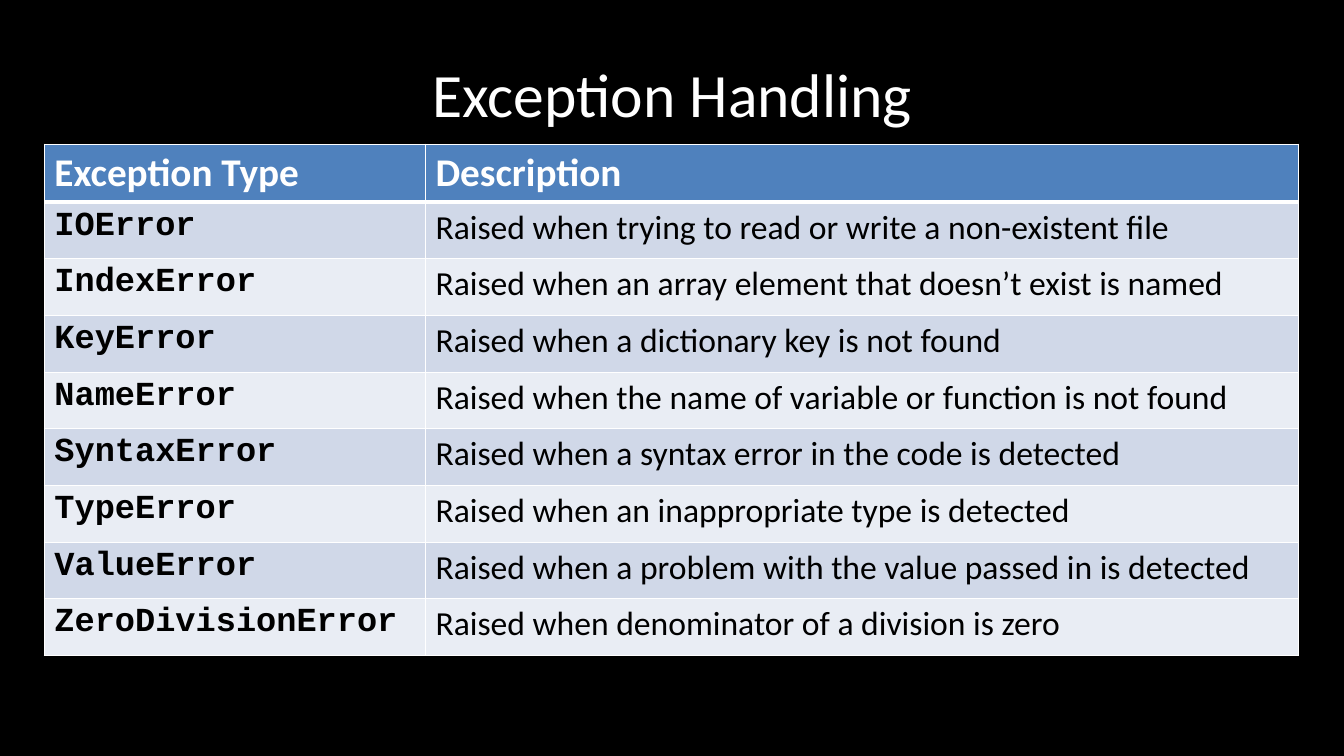
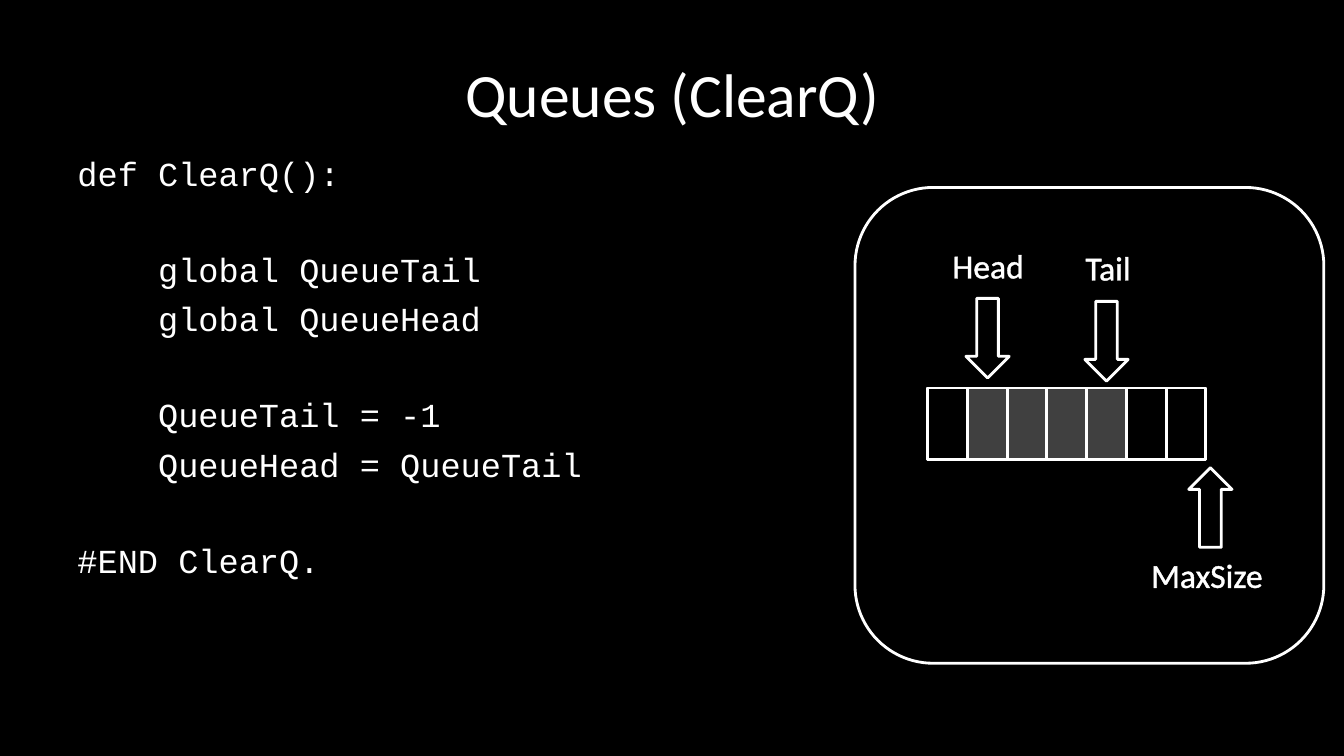
from lxml.etree import SubElement
from pptx import Presentation
from pptx.dml.color import RGBColor
from pptx.enum.shapes import MSO_SHAPE
from pptx.enum.text import MSO_ANCHOR, MSO_AUTO_SIZE, PP_ALIGN
from pptx.oxml import parse_xml
from pptx.oxml.ns import nsdecls, qn
from pptx.util import Inches, Pt

COLOURS = {
    "background": "000000",
    "white": "FFFFFF",
    "header": "4F81BD",
    "odd row": "D0D8E8",
    "even row": "E9EDF4",
    "filled cell": "404040",
}
TEXT_FONT, CODE_FONT = "Calibri", "Courier New"


def add_span(para, text, size, colour="white", font=TEXT_FONT, bold=False):
    span = para.add_run()
    span.text = text
    span.font.name = font
    span.font.size = Pt(size)
    span.font.bold = bold
    span.font.color.rgb = RGBColor.from_string(COLOURS[colour])
    return span


def add_outlined(page, kind, left, top, width, height, fill=None):
    """Add a white-outlined shape, see-through unless a fill is named."""
    shape = page.shapes.add_shape(
        kind, Inches(left), Inches(top), Inches(width), Inches(height))
    shape.shadow.inherit = False
    if fill:
        shape.fill.solid()
        shape.fill.fore_color.rgb = RGBColor.from_string(COLOURS[fill])
    else:
        shape.fill.background()
    shape.line.color.rgb = RGBColor.from_string(COLOURS["white"])
    shape.line.width = Pt(2)
    return shape


deck = Presentation()
deck.slide_width, deck.slide_height = Inches(13.33), Inches(7.5)
backdrop = deck.slide_master.background.fill
backdrop.solid()
backdrop.fore_color.rgb = RGBColor.from_string(COLOURS["background"])

pages = []
for heading in ("Exception Handling", "Queues (ClearQ)"):
    page = deck.slides.add_slide(deck.slide_layouts[5])
    title = page.shapes.title
    title.left, title.top = Inches(0.67), Inches(0.3)
    title.width, title.height = Inches(12), Inches(1.25)
    title.text_frame.vertical_anchor = MSO_ANCHOR.MIDDLE
    para = title.text_frame.paragraphs[0]
    para.alignment = PP_ALIGN.CENTER
    add_span(para, heading, 44)
    pages.append(page)
exceptions_page, queue_page = pages

# Exception table
rows = [
    ("Exception Type", "Description"),
    ("IOError", "Raised when trying to read or write a non-existent file"),
    ("IndexError", "Raised when an array element that doesn’t exist is named"),
    ("KeyError", "Raised when a dictionary key is not found"),
    ("NameError", "Raised when the name of variable or function is not found"),
    ("SyntaxError", "Raised when a syntax error in the code is detected"),
    ("TypeError", "Raised when an inappropriate type is detected"),
    ("ValueError", "Raised when a problem with the value passed in is detected"),
    ("ZeroDivisionError", "Raised when denominator of a division is zero"),
]
row_height = 5.06 / len(rows)
table = exceptions_page.shapes.add_table(
    len(rows), 2, Inches(0.44), Inches(1.43), Inches(12.44), Inches(5.06)).table
for column, width in zip(table.columns, (3.78, 8.66)):
    column.width = Inches(width)
for row_number, texts in enumerate(rows):
    table.rows[row_number].height = Inches(row_height)
    is_header = row_number == 0
    row_fill = "header" if is_header else ("even row", "odd row")[row_number % 2]
    for column_number, text in enumerate(texts):
        cell = table.cell(row_number, column_number)
        borders = cell._tc.get_or_add_tcPr()
        for side in "LRTB":
            under_header = (row_number, side) in ((0, "B"), (1, "T"))
            line = SubElement(borders, qn(f"a:ln{side}"),
                              w=str(Pt(3 if under_header else 1)))
            colour = SubElement(line, qn("a:solidFill"))
            SubElement(colour, qn("a:srgbClr"), val=COLOURS["white"])
        cell.fill.solid()
        cell.fill.fore_color.rgb = RGBColor.from_string(COLOURS[row_fill])
        para = cell.text_frame.paragraphs[0]
        if is_header:
            add_span(para, text, 28, bold=True)
        elif column_number == 0:
            add_span(para, text, 24, "background", CODE_FONT, bold=True)
        else:
            add_span(para, text, 24, "background")

# Code listing: text, indent level, gap of one line before it
code = [
    ("def ClearQ():", 0, False),
    ("global QueueTail", 1, True),
    ("global QueueHead", 1, False),
    ("QueueTail = -1", 1, True),
    ("QueueHead = QueueTail", 1, False),
    ("#END ClearQ.", 0, True),
]
line_gap, line_pitch = 6.3, 33.5
box = queue_page.shapes.add_textbox(
    Inches(0.67), Inches(1.47), Inches(12), Inches(4.95))
box.text_frame.word_wrap = True
for number, (text, level, has_gap) in enumerate(code):
    frame = box.text_frame
    para = frame.add_paragraph() if number else frame.paragraphs[0]
    para.space_before = Pt(line_gap + line_pitch * has_gap)
    para._p.get_or_add_pPr().set("marL", str(Inches(0.8 * level)))
    add_span(para, text, 24, font=CODE_FONT)

# Queue diagram
queue_left, queue_top, queue_width, queue_height = 9.2, 3.85, 2.76, 0.71
cell_count, filled_cells = 7, range(1, 5)
cell_width = queue_width / cell_count
add_outlined(queue_page, MSO_SHAPE.ROUNDED_RECTANGLE, 8.48, 1.86, 4.65, 4.72)
add_outlined(queue_page, MSO_SHAPE.RECTANGLE,
             queue_left, queue_top, queue_width, queue_height)
for number in range(cell_count):
    add_outlined(queue_page, MSO_SHAPE.RECTANGLE,
                 queue_left + number * cell_width, queue_top,
                 cell_width, queue_height,
                 "filled cell" if number in filled_cells else None)

# Pointer: name, label left, top and width, arrow left and top, rotation
pointers = [
    ("Head", 9.34, 2.38, 0.92, 9.58, 2.96, 0),
    ("Tail", 10.66, 2.4, 0.66, 10.76, 2.99, 0),
    ("MaxSize", 11.31, 5.45, 1.32, 11.79, 4.64, 180),
]
for name, left, top, width, arrow_left, arrow_top, rotation in pointers:
    arrow = add_outlined(queue_page, MSO_SHAPE.DOWN_ARROW,
                         arrow_left, arrow_top, 0.43, 0.79, "background")
    arrow.rotation = rotation
    label = queue_page.shapes.add_textbox(
        Inches(left), Inches(top), Inches(width), Inches(0.5))
    label.text_frame.word_wrap = False
    label.text_frame.auto_size = MSO_AUTO_SIZE.SHAPE_TO_FIT_TEXT
    para = label.text_frame.paragraphs[0]
    para.alignment = PP_ALIGN.CENTER
    span = add_span(para, name, 24)
    outline = parse_xml(
        f'<a:ln {nsdecls("a")} w="{Pt(1.4)}"><a:solidFill>'
        f'<a:srgbClr val="{COLOURS["white"]}"/></a:solidFill></a:ln>')
    span._r.get_or_add_rPr().insert(0, outline)

deck.save("out.pptx")
